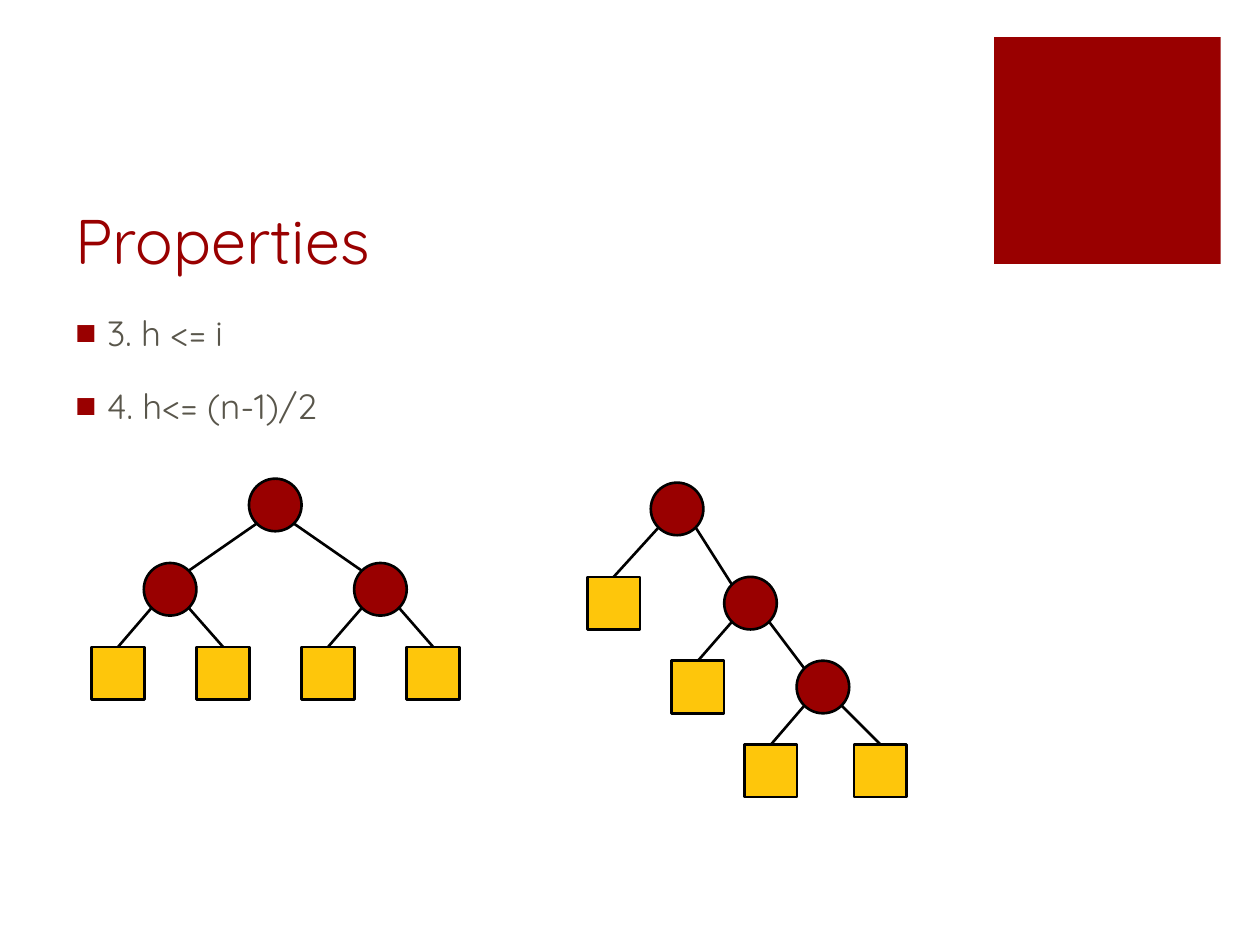
"""Build a slide on binary tree height properties with two example trees."""
import pptx
import pptx.dml.color
import pptx.enum.shapes
import pptx.enum.text
import pptx.oxml
import pptx.oxml.ns
import pptx.util
from pptx.util import Cm

TITLE = "Properties"
PROPERTIES = ["3. h <= i", "4. h<= (n-1)/2"]
FONT = "Quicksand"
RED, YELLOW, BLACK, GREY = "990000", "FEC60B", "000000", "59564B"
NODE_SIZE = 1.06
DIAGONAL = NODE_SIZE / 2 * 0.5 ** 0.5

BALANCED = {
    "centers": {
        "root": (5.55, 10.18),
        "left": (3.43, 11.88), "right": (7.67, 11.88),
        **{f"leaf {i}": (2.38 + 2.117 * i, 13.57) for i in range(4)},
    },
    "children": {
        "root": ("left", "right"),
        "left": ("leaf 0", "leaf 1"),
        "right": ("leaf 2", "leaf 3"),
    },
}
SKEWED = {
    "centers": {
        "root": (13.65, 10.26),
        "leaf 0": (12.37, 12.16), "middle": (15.13, 12.16),
        "leaf 1": (14.07, 13.85), "bottom": (16.59, 13.85),
        "leaf 2": (15.54, 15.54), "leaf 3": (17.75, 15.54),
    },
    "children": {
        "root": ("leaf 0", "middle"),
        "middle": ("leaf 1", "bottom"),
        "bottom": ("leaf 2", "leaf 3"),
    },
}


def color(value):
    return pptx.dml.color.RGBColor.from_string(value)


def add_box(slide, kind, left, top, size, fill, outlined=True):
    shape = slide.shapes.add_shape(kind, Cm(left), Cm(top), Cm(size), Cm(size))
    shape.shadow.inherit = False
    shape.fill.solid()
    shape.fill.fore_color.rgb = color(fill)
    if outlined:
        shape.line.color.rgb = color(BLACK)
        shape.line.width = pptx.util.Pt(1.5)
    else:
        shape.line.fill.background()
    return shape


def add_edge(slide, start, end, leaf=None):
    edge = slide.shapes.add_connector(
        pptx.enum.shapes.MSO_CONNECTOR.STRAIGHT, *map(Cm, start + end))
    if leaf is not None:
        edge.end_connect(leaf, 0)
    edge.line.color.rgb = color(BLACK)
    edge.line.width = pptx.util.Pt(1.5)
    properties = edge._element.spPr
    properties.append(pptx.oxml.parse_xml(
        f'<a:effectLst {pptx.oxml.ns.nsdecls("a")}/>'))


def add_tree(slide, centers, children):
    kinds = pptx.enum.shapes.MSO_SHAPE
    nodes = {}
    for name, (x, y) in centers.items():
        kind, fill = (kinds.OVAL, RED) if name in children else (kinds.RECTANGLE, YELLOW)
        nodes[name] = add_box(slide, kind, x - NODE_SIZE / 2, y - NODE_SIZE / 2,
                              NODE_SIZE, fill)
    for parent, pair in children.items():
        x, y = centers[parent]
        for child, side in zip(pair, (-1, 1)):
            child_x, child_y = centers[child]
            start = (x + side * DIAGONAL, y + DIAGONAL)
            if child in children:
                add_edge(slide, start, (child_x - side * DIAGONAL, child_y - DIAGONAL))
            else:
                add_edge(slide, start, (child_x, child_y - NODE_SIZE / 2), nodes[child])


def add_text(slide, top, height, lines, size, text_color, anchor):
    frame = slide.shapes.add_textbox(Cm(1.27), Cm(top), Cm(18.08), Cm(height)).text_frame
    frame.word_wrap = True
    frame.vertical_anchor = anchor
    for index, line in enumerate(lines):
        paragraph = frame.add_paragraph() if index else frame.paragraphs[0]
        run = paragraph.add_run()
        run.text = line
        run.font.name = FONT
        run.font.size = pptx.util.Pt(size)
        run.font.color.rgb = color(text_color)
    return frame


def add_bullet(paragraph):
    paragraph.space_before = pptx.util.Pt(18)
    properties = paragraph._p.get_or_add_pPr()
    properties.set("marL", str(Cm(0.64)))
    properties.set("indent", str(Cm(-0.64)))
    namespace = pptx.oxml.ns.nsdecls("a")
    for xml in (
        f'<a:buClr {namespace}><a:srgbClr val="{RED}"/></a:buClr>',
        f'<a:buFont {namespace} typeface="Arial"/>',
        f'<a:buChar {namespace} char="■"/>',
    ):
        properties.append(pptx.oxml.parse_xml(xml))


def main():
    presentation = pptx.Presentation()
    presentation.slide_width, presentation.slide_height = Cm(25.4), Cm(19.05)
    slide = presentation.slides.add_slide(presentation.slide_layouts[6])
    anchors = pptx.enum.text.MSO_ANCHOR
    add_box(slide, pptx.enum.shapes.MSO_SHAPE.RECTANGLE, 20.04, 0.75, 4.57, RED, False)
    add_text(slide, 2.54, 3.18, [TITLE], 36, RED, anchors.BOTTOM)
    body = add_text(slide, 6.15, 10.87, PROPERTIES, 20, GREY, anchors.TOP)
    for paragraph in body.paragraphs:
        add_bullet(paragraph)
    for tree in (BALANCED, SKEWED):
        add_tree(slide, **tree)
    presentation.save("out.pptx")


if __name__ == "__main__":
    main()
